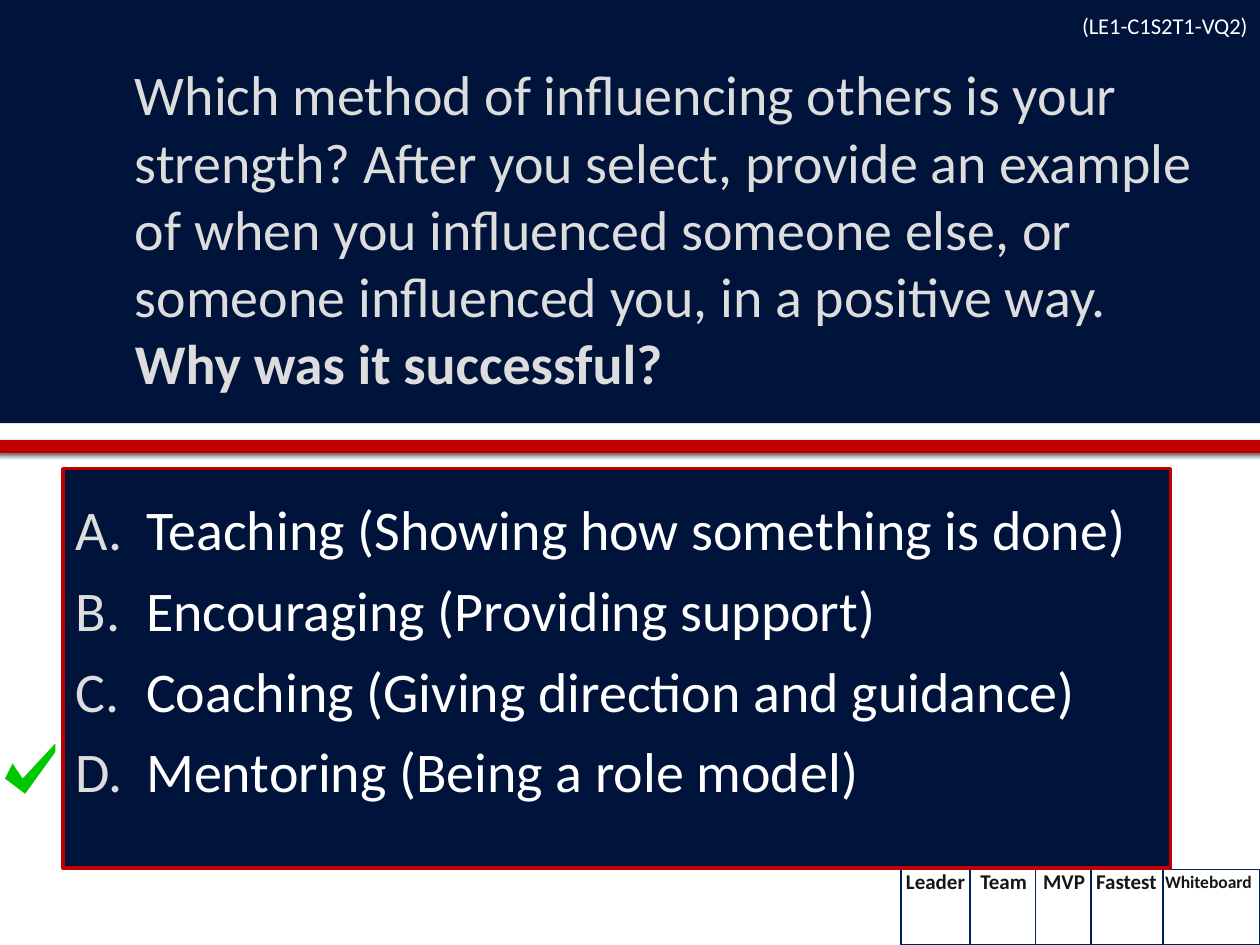
import dataclasses

import lxml.etree
import pptx
import pptx.dml.color
import pptx.enum.shapes
import pptx.enum.text
import pptx.oxml
import pptx.oxml.ns
import pptx.util
from pptx.util import Inches

Color = pptx.dml.color.RGBColor.from_string
Align = pptx.enum.text.PP_ALIGN
Anchor = pptx.enum.text.MSO_ANCHOR
qn = pptx.oxml.ns.qn


@dataclasses.dataclass(frozen=True)
class Theme:
    font: str = "Calibri"
    navy: str = "00133A"
    red: str = "C00000"
    border: str = "002060"
    light: str = "DDDDDD"
    white: str = "FFFFFF"
    dark: str = "161616"
    green: str = "00C800"
    shadow: str = "000000"
    large: float = 32
    code: float = 12.9
    label: float = 12
    small_label: float = 10


THEME = Theme()

QUESTION = (
    "Which method of influencing others is your strength?\u00a0After you select, "
    "provide an example of when you influenced someone else, or someone "
    "influenced you, in a positive way. "
)
EMPHASIS = "Why was it successful?"
ANSWERS = (
    "Teaching (Showing how something is done)",
    "Encouraging (Providing support)",
    "Coaching (Giving direction and guidance)",
    "Mentoring (Being a role model)",
)
SCORE_WIDTHS = (0.55, 0.52, 0.44, 0.57, 0.77)
SCORE_LABELS = (
    ("Leader", -0.06, -0.06, 0.67, 0.3, THEME.label),
    ("Team", 0.48, -0.06, 0.67, 0.3, THEME.label),
    ("MVP", 0.96, -0.06, 0.67, 0.3, THEME.label),
    ("Fastest", 1.43, -0.06, 0.72, 0.3, THEME.label),
    ("Whiteboard", 1.98, -0.04, 0.92, 0.27, THEME.small_label),
)


def add_element(parent, tag, **attributes):
    element = lxml.etree.SubElement(parent, qn(tag))
    for name, value in attributes.items():
        element.set(name, str(value))
    return element


def paint(shape, fill, line=None, width=0):
    shape.fill.solid()
    shape.fill.fore_color.rgb = Color(fill)
    if line:
        shape.line.color.rgb = Color(line)
        shape.line.width = pptx.util.Pt(width)
    else:
        shape.line.fill.background()


def format_run(run, size, color, bold=False):
    run.font.name = THEME.font
    run.font.size = pptx.util.Pt(size)
    run.font.color.rgb = Color(color)
    run.font.bold = bold


def set_frame(shape, margins, anchor):
    frame = shape.text_frame
    frame.word_wrap = True
    frame.auto_size = pptx.enum.text.MSO_AUTO_SIZE.NONE
    frame.vertical_anchor = anchor
    (frame.margin_left, frame.margin_top,
     frame.margin_right, frame.margin_bottom) = map(Inches, margins)
    return frame


def add_panel(slide, left, top, width, height):
    shape = slide.shapes.add_shape(
        pptx.enum.shapes.MSO_SHAPE.RECTANGLE,
        Inches(left), Inches(top), Inches(width), Inches(height))
    shape.shadow.inherit = False
    return shape


def place_placeholder(shape, left, top, width, height):
    shape.left, shape.top = Inches(left), Inches(top)
    shape.width, shape.height = Inches(width), Inches(height)
    shape.element.getparent().append(shape.element)


def add_label(slide, text, left, top, width, height, margins, alignment, size, color, bold=False):
    box = slide.shapes.add_textbox(Inches(left), Inches(top), Inches(width), Inches(height))
    frame = set_frame(box, margins, Anchor.MIDDLE)
    frame.text = text
    paragraph = frame.paragraphs[0]
    paragraph.alignment = alignment
    format_run(paragraph.runs[0], size, color, bold)


def add_question(slide, left, top, width, height):
    paint(add_panel(slide, left, top, width, height), THEME.navy)
    title = slide.shapes.title
    place_placeholder(title, left + 0.97, top + 0.38, width - 1.29, height - 0.5)
    paint(title, THEME.navy)
    frame = set_frame(title, (0.1, 0.05, 0.05, 0.05), Anchor.MIDDLE)
    frame.text = QUESTION
    paragraph = frame.paragraphs[0]
    paragraph.alignment = Align.LEFT
    paragraph.add_run().text = EMPHASIS
    for run, bold in zip(paragraph.runs, (False, True)):
        format_run(run, THEME.large, THEME.light, bold)
    add_label(slide, "(LE1-C1S2T1-VQ2)", left + width - 2.75, top + 0.01, 2.75, 0.33,
              (0.06, 0.1, 0.1, 0.05), Align.RIGHT, THEME.code, THEME.white)


def add_divider(slide, left, top, width, height):
    bar = add_panel(slide, left, top, width, height)
    paint(bar, THEME.red, THEME.red, 4)
    effects = bar.element.spPr.find(qn("a:effectLst"))
    shadow = add_element(effects, "a:outerShdw", blurRad=pptx.util.Pt(2.5),
                         dist=pptx.util.Pt(0.8), dir=90 * 60000, rotWithShape=0)
    color = add_element(shadow, "a:srgbClr", val=THEME.shadow)
    add_element(color, "a:alpha", val=60000)


def add_answers(slide, left, top, width, height):
    body = slide.placeholders[1]
    place_placeholder(body, left, top, width, height)
    paint(body, THEME.navy, THEME.red, 2)
    frame = set_frame(body, (0.1, 0.1, 0.1, 0.05), Anchor.TOP)
    frame.text = "\n".join(ANSWERS)
    for paragraph in frame.paragraphs:
        paragraph.line_spacing = 1.2
        paragraph.space_before = pptx.util.Pt(0)
        properties = paragraph._p.get_or_add_pPr()
        properties.set("marL", str(Inches(0.56)))
        properties.set("indent", str(-Inches(0.56)))
        add_element(add_element(properties, "a:buClr"), "a:srgbClr", val=THEME.light)
        add_element(properties, "a:buFont", typeface=THEME.font)
        add_element(properties, "a:buAutoNum", type="alphaUcPeriod")
        format_run(paragraph.runs[0], THEME.large, THEME.white)


def add_check_mark(slide, left, top, width, height):
    outline = ((0.15, 0.4), (0, 0.7), (0.4, 1), (1, 0.17), (1, 0), (0.35, 0.7))
    points = [(Inches(left + x * width), Inches(top + y * height)) for x, y in outline]
    builder = slide.shapes.build_freeform(*points[0])
    builder.add_line_segments(points[1:], close=True)
    check = builder.convert_to_shape()
    check.shadow.inherit = False
    paint(check, THEME.green)


def add_cell_borders(cell):
    properties = cell._tc.get_or_add_tcPr()
    for index, side in enumerate(("a:lnL", "a:lnR", "a:lnT", "a:lnB")):
        line = lxml.etree.Element(qn(side))
        line.set("w", str(pptx.util.Pt(1)))
        add_element(add_element(line, "a:solidFill"), "a:srgbClr", val=THEME.border)
        properties.insert(index, line)


def add_scoreboard(slide, left, top, width, height):
    table = slide.shapes.add_table(
        1, len(SCORE_WIDTHS), Inches(left), Inches(top), Inches(width), Inches(height)).table
    table.first_row = table.horz_banding = False
    for column, column_width in zip(table.columns, SCORE_WIDTHS):
        column.width = Inches(column_width)
    for cell in table.iter_cells():
        cell.fill.background()
        add_cell_borders(cell)
    for text, x, y, label_width, label_height, size in SCORE_LABELS:
        add_label(slide, text, left + x, top + y, label_width, label_height,
                  (0.1, 0.05, 0.1, 0.05), Align.CENTER, size, THEME.dark, True)


def main():
    presentation = pptx.Presentation()
    presentation.slide_width, presentation.slide_height = Inches(10), Inches(7.5)
    slide = presentation.slides.add_slide(presentation.slide_layouts[1])
    slide.background.fill.solid()
    slide.background.fill.fore_color.rgb = Color(THEME.white)
    add_question(slide, 0, 0, 10, 3.36)
    add_divider(slide, 0, 3.52, 10, 0.05)
    add_scoreboard(slide, 7.15, 6.9, 2.85, 0.6)
    add_answers(slide, 0.5, 3.72, 8.79, 3.17)
    add_check_mark(slide, 0.04, 5.9, 0.4, 0.4)
    presentation.save("out.pptx")


if __name__ == "__main__":
    main()
